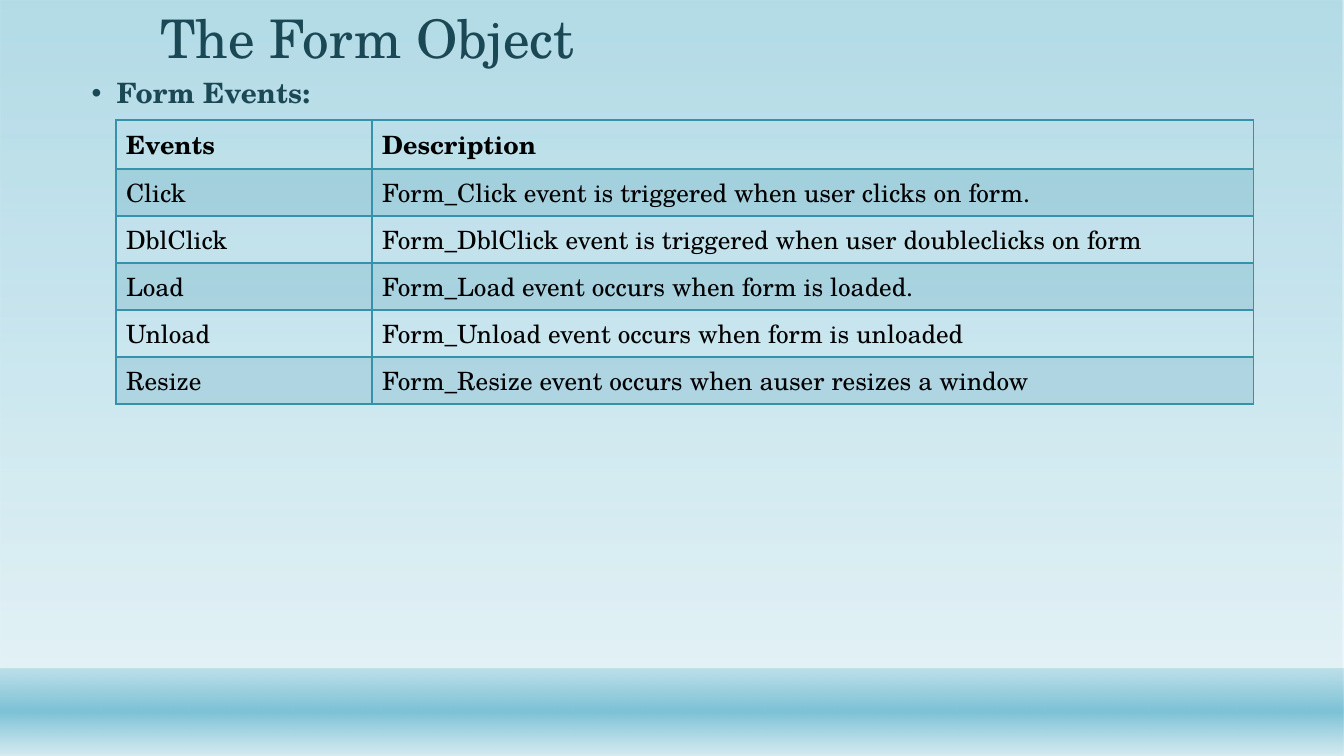
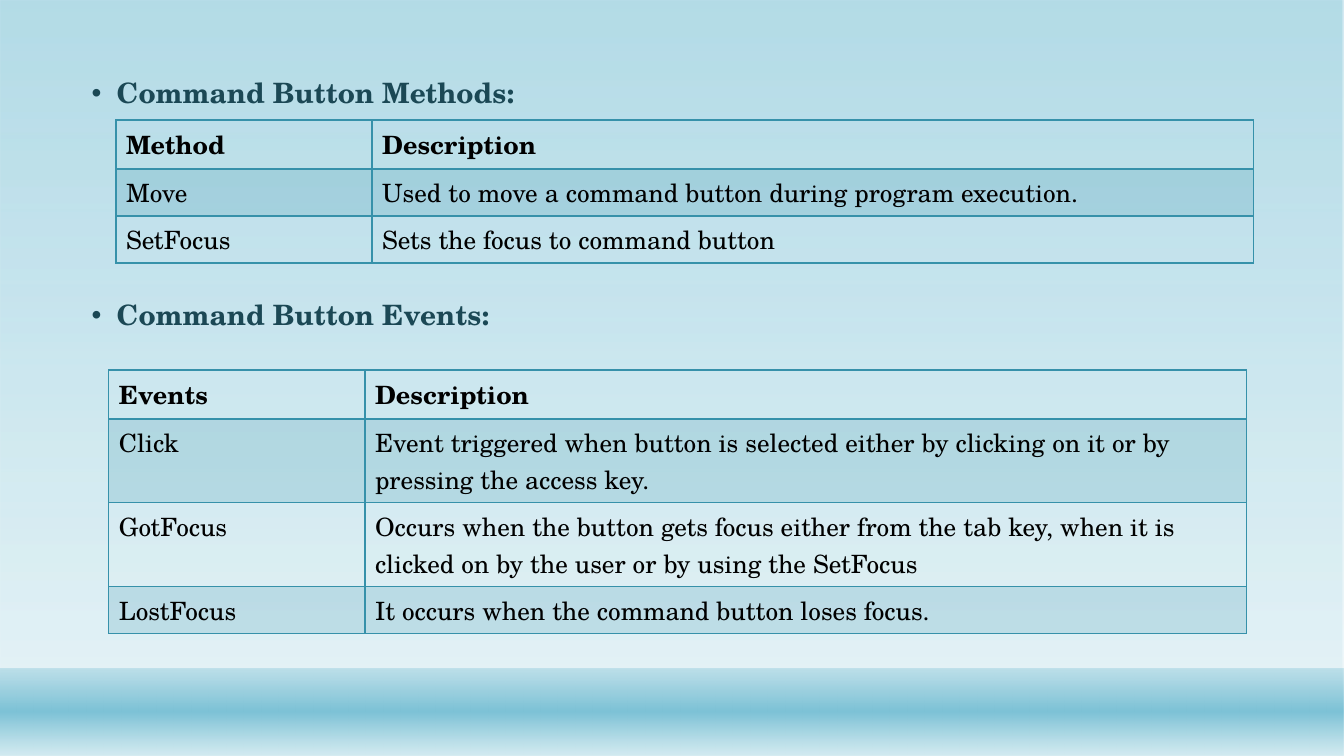
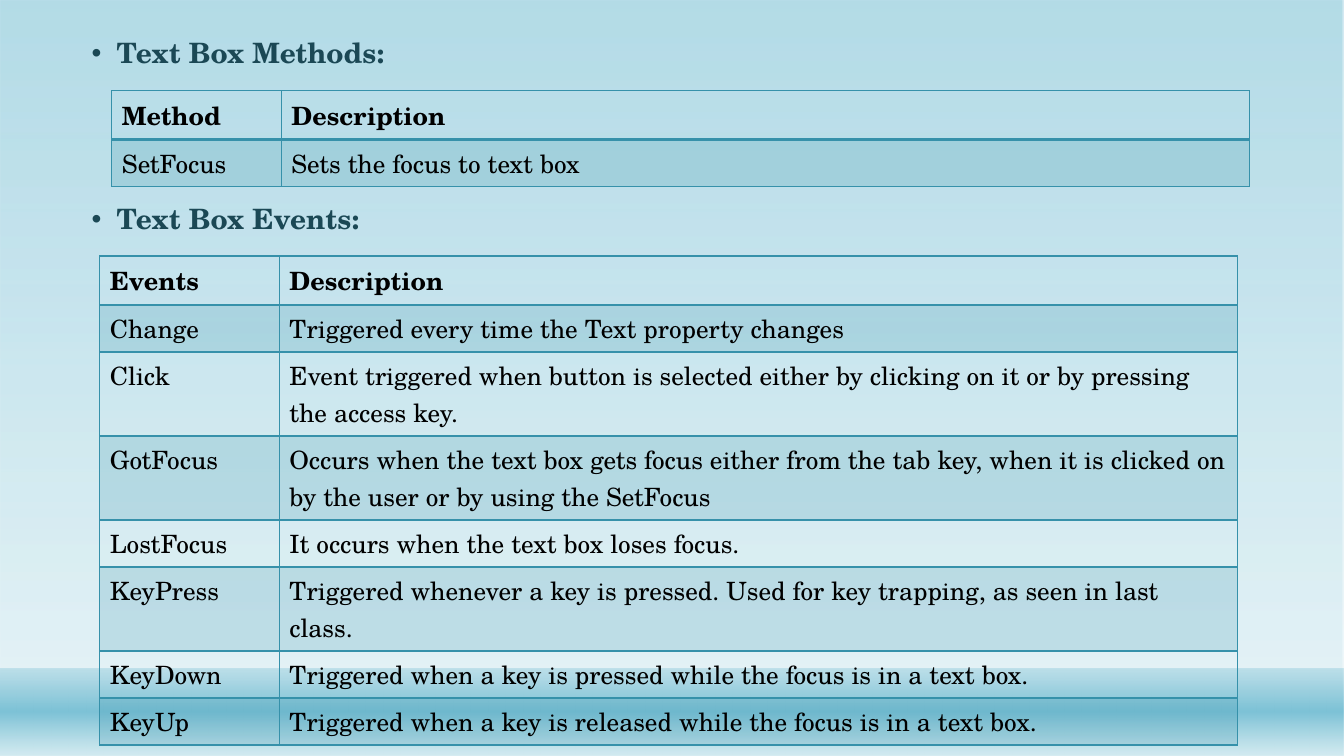
import pptx
import pptx.util
import pptx.oxml
import pptx.oxml.ns
import pptx.dml.color
import pptx.enum.shapes
import pptx.enum.text
import lxml.etree
import math
from dataclasses import dataclass

SLIDES = [
    {"title": "The Form Object", "sections": [
        {"heading": "Form Events:", "heading_top": 0.74,
         "left": 1.15, "top": 1.19, "key_width": 2.54,
         "rows": [
             ("Events", "Description"),
             ("Click", "Form_Click event is triggered when user clicks on form."),
             ("DblClick", "Form_DblClick event is triggered when user doubleclicks on form"),
             ("Load", "Form_Load event occurs when form is loaded."),
             ("Unload", "Form_Unload event occurs when form is unloaded"),
             ("Resize", "Form_Resize event occurs when auser resizes a window"),
         ]},
    ]},
    {"sections": [
        {"heading": "Command Button Methods:", "heading_top": 0.74,
         "left": 1.15, "top": 1.19, "key_width": 2.54,
         "rows": [
             ("Method", "Description"),
             ("Move", "Used to move a command button during program execution."),
             ("SetFocus", "Sets the focus to command button"),
         ]},
        {"heading": "Command Button Events:", "heading_top": 2.94,
         "left": 1.08, "top": 3.67, "key_width": 2.54,
         "rows": [
             ("Events", "Description"),
             ("Click", "Event triggered when button is selected either by clicking on it "
                       "or by pressing the access key."),
             ("GotFocus", "Occurs when the button gets focus either from the tab key, when "
                          "it is clicked on by the user or by using the SetFocus"),
             ("LostFocus", "It occurs when the command button loses focus."),
         ]},
    ]},
    {"sections": [
        {"heading": "Text Box Methods:", "heading_top": 0.34,
         "left": 1.11, "top": 0.9, "key_width": 1.68,
         "rows": [
             ("Method", "Description"),
             ("SetFocus", "Sets the focus to text box"),
         ]},
        {"heading": "Text Box Events:", "heading_top": 1.99,
         "left": 0.99, "top": 2.54, "key_width": 1.78,
         "rows": [
             ("Events", "Description"),
             ("Change", "Triggered every time the Text property changes"),
             ("Click", "Event triggered when button is selected either by clicking on it "
                       "or by pressing the access key."),
             ("GotFocus", "Occurs when the text box gets focus either from the tab key, when "
                          "it is clicked on by the user or by using the SetFocus"),
             ("LostFocus", "It occurs when the text box loses focus."),
             ("KeyPress", "Triggered whenever a key is pressed. Used for key trapping, "
                          "as seen in last class."),
             ("KeyDown", "Triggered when a key is pressed while the focus is in a text box."),
             ("KeyUp", "Triggered when a key is released while the focus is in a text box."),
         ]},
    ]},
]


@dataclass(frozen=True)
class Theme:
    font: str = "TeX Gyre Schola"
    heading: str = "1B4855"
    body: str = "000000"
    accent: str = "3691AA"
    sky: str = "7DC2D6"
    mist: str = "D4EBF1"
    title_size: int = 38
    heading_size: int = 20
    table_size: int = 18
    line_pitch: float = 26.4
    cell_padding: float = 7.2
    header_extra: float = 1.4
    band_alpha: int = 20
    thin: int = 1
    thick: int = 2


THEME = Theme()
WIDTH, HEIGHT = 13.33, 7.5
FOOTER_TOP = 6.63
TABLE_WIDTH = 11.28
LINE_CHARS = 80
PLAIN_TABLE = "{2D5ABB26-0587-4C30-8999-92F81FD0307C}"
BACKDROP = [
    (0, HEIGHT, [(0, THEME.sky, 58), (88, THEME.mist, 65)]),
    (FOOTER_TOP, HEIGHT - FOOTER_TOP,
     [(1, THEME.sky, 38), (49, THEME.sky, 100), (100, THEME.mist, 89)]),
]

Inches = pptx.util.Inches
qn = pptx.oxml.ns.qn


def xml(markup):
    tag, rest = markup[1:].split(" ", 1)
    return pptx.oxml.parse_xml(f"<{tag} {pptx.oxml.ns.nsdecls('a')} {rest}")


def write(tf, text, size, color, bold=False, spacing=None, bullet=False):
    p = tf.paragraphs[0]
    if spacing:
        p.line_spacing = spacing
    if bullet:
        pPr = p._p.get_or_add_pPr()
        pPr.set("marL", str(Inches(0.3)))
        pPr.set("indent", str(Inches(-0.25)))
        pPr.append(xml('<a:buFont typeface="Arial"/>'))
        pPr.append(xml('<a:buChar char="•"/>'))
    r = p.add_run()
    r.text = text
    r.font.name = THEME.font
    r.font.size = pptx.util.Pt(size)
    r.font.bold = bold
    r.font.color.rgb = pptx.dml.color.RGBColor.from_string(color)


def add_text(s, box, text, anchor="TOP", **fmt):
    tf = s.shapes.add_textbox(*map(Inches, box)).text_frame
    tf.word_wrap = True
    tf.vertical_anchor = pptx.enum.text.MSO_ANCHOR[anchor]
    write(tf, text, spacing=0.9, color=THEME.heading, **fmt)


def add_backdrop(prs, s):
    tree = prs.slide_master.shapes.element
    for number, (top, height, stops) in enumerate(BACKDROP):
        sp = s.shapes.add_shape(pptx.enum.shapes.MSO_SHAPE.RECTANGLE, 0, Inches(top),
                                prs.slide_width, Inches(height))
        sp.shadow.inherit = False
        sp.line.fill.background()
        sp.fill.background()
        marks = "".join(
            f'<a:gs pos="{pos * 1000}"><a:srgbClr val="{color}">'
            f'<a:alpha val="{alpha * 1000}"/></a:srgbClr></a:gs>'
            for pos, color, alpha in stops)
        gradient = xml(f'<a:gradFill rotWithShape="1"><a:gsLst>{marks}</a:gsLst>'
                       '<a:lin ang="5400000" scaled="0"/></a:gradFill>')
        spPr = sp.element.spPr
        spPr.replace(spPr.find(qn("a:noFill")), gradient)
        sp.element.nvSpPr.cNvPr.set("id", str(100 + number))
        tree.insert(2 + number, sp.element)


def style_cell(cell, row):
    if row % 2:
        cell.fill.solid()
        cell.fill.fore_color.rgb = pptx.dml.color.RGBColor.from_string(THEME.accent)
        color = cell._tc.tcPr.find(".//" + qn("a:srgbClr"))
        lxml.etree.SubElement(color, qn("a:alpha"), val=str(THEME.band_alpha * 1000))
    else:
        cell.fill.background()
    heavy = {(0, "B"), (1, "T")}
    for position, side in enumerate("LRTB"):
        width = THEME.thick if (row, side) in heavy else THEME.thin
        cell._tc.tcPr.insert(position, xml(
            f'<a:ln{side} w="{pptx.util.Pt(width)}"><a:solidFill>'
            f'<a:srgbClr val="{THEME.accent}"/></a:solidFill></a:ln{side}>'))


def row_height(row, description):
    lines = math.ceil(len(description) / LINE_CHARS)
    extra = THEME.header_extra if row == 0 else 0
    return pptx.util.Pt(lines * THEME.line_pitch + THEME.cell_padding + extra)


def add_grid(s, section):
    rows = section["rows"]
    heights = [row_height(row, texts[1]) for row, texts in enumerate(rows)]
    table = s.shapes.add_table(
        len(rows), 2, Inches(section["left"]), Inches(section["top"]),
        Inches(TABLE_WIDTH), sum(heights)).table
    table.first_row = table.horz_banding = False
    table._tbl.tblPr.find(qn("a:tableStyleId")).text = PLAIN_TABLE
    key_width = section["key_width"]
    for column, width in zip(table.columns, (key_width, TABLE_WIDTH - key_width)):
        column.width = Inches(width)
    for row, texts in enumerate(rows):
        table.rows[row].height = heights[row]
        for col, text in enumerate(texts):
            cell = table.cell(row, col)
            write(cell.text_frame, text, THEME.table_size, THEME.body, bold=row == 0)
            style_cell(cell, row)


def main():
    prs = pptx.Presentation()
    prs.slide_width, prs.slide_height = Inches(WIDTH), Inches(HEIGHT)
    blank = prs.slide_layouts[6]
    for number, content in enumerate(SLIDES):
        s = prs.slides.add_slide(blank)
        if number == 0:
            add_backdrop(prs, s)
        if "title" in content:
            add_text(s, (1.49, 0.07, 10.95, 0.67), content["title"],
                     anchor="BOTTOM", size=THEME.title_size)
        for section in content["sections"]:
            add_text(s, (0.76, section["heading_top"], 12.17, 0.45), section["heading"],
                     size=THEME.heading_size, bold=True, bullet=True)
            add_grid(s, section)
    prs.save("out.pptx")


if __name__ == "__main__":
    main()
